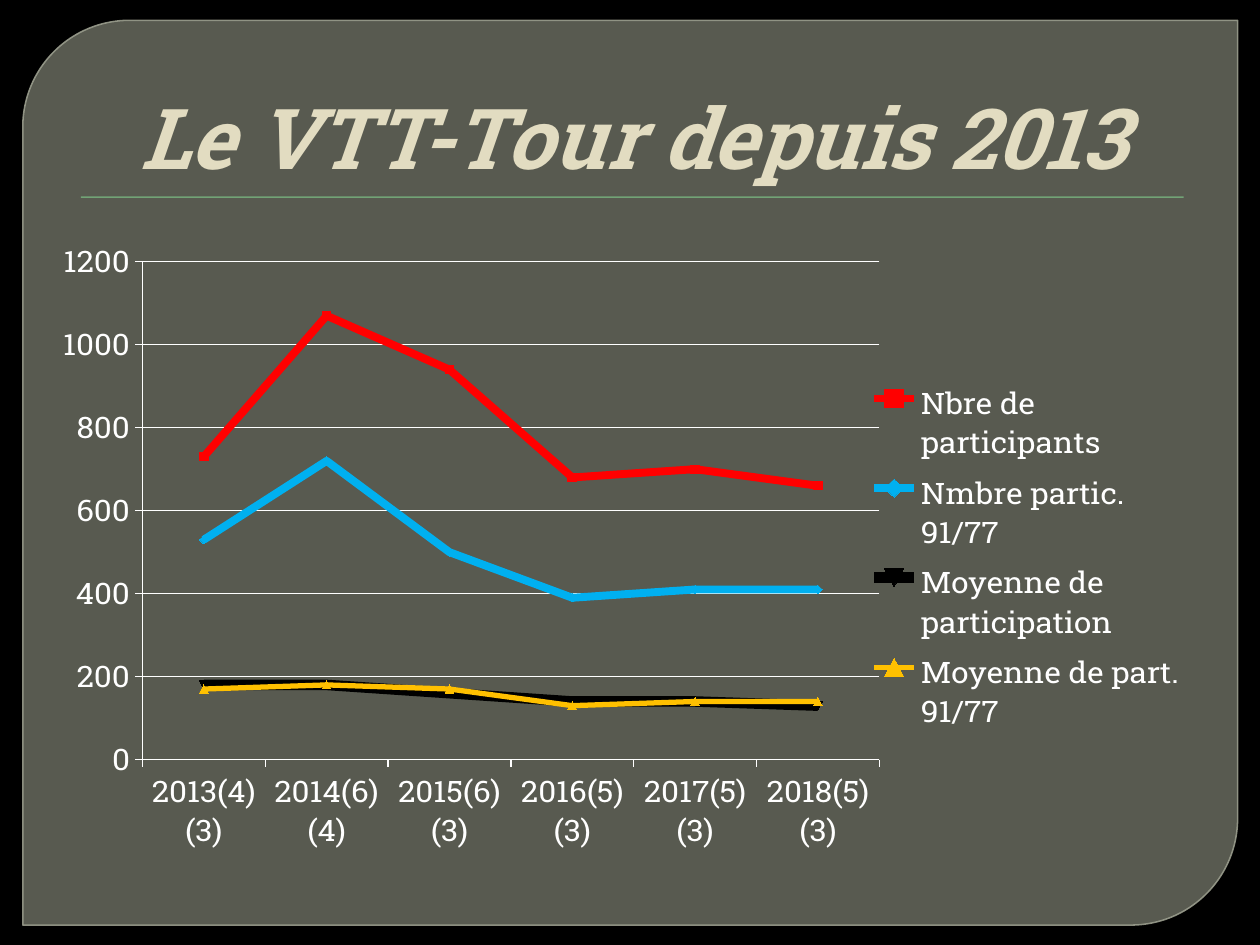
import dataclasses

import lxml.etree
import pptx
import pptx.chart.data
import pptx.dml.color
import pptx.enum.chart
import pptx.enum.shapes
import pptx.enum.text
import pptx.oxml
import pptx.oxml.ns
import pptx.util
from pptx.util import Cm

FONT = "Roboto Slab"
COLORS = {
    "background": "000000",
    "panel": "888B7B",
    "border": "9DA090",
    "rule": "72A376",
    "title": "E2DCC1",
    "text": "FFFFFF",
    "red": "FF0000",
    "blue": "00B0F0",
    "black": "000000",
    "yellow": "FFC000",
}


@dataclasses.dataclass(frozen=True)
class Series:
    name: str
    values: tuple[int, ...]
    color: str
    width: float


@dataclasses.dataclass(frozen=True)
class Box:
    """Place and size in centimetres."""

    left: float
    top: float
    width: float
    height: float

    def lengths(self) -> list[Cm]:
        return [Cm(value) for value in dataclasses.astuple(self)]


CATEGORIES = (
    "2013(4)(3)", "2014(6)(4)", "2015(6)(3)",
    "2016(5)(3)", "2017(5)(3)", "2018(5)(3)",
)
SERIES = (
    Series("Nbre de participants", (730, 1070, 940, 680, 700, 660), "red", 4.5),
    Series("Nmbre partic. 91/77", (530, 720, 500, 390, 410, 410), "blue", 4.5),
    Series("Moyenne de participation", (180, 180, 160, 140, 140, 130), "black", 6),
    Series("Moyenne de part. 91/77", (170, 180, 170, 130, 140, 140), "yellow", 3),
)


def rgb(name: str) -> pptx.dml.color.RGBColor:
    return pptx.dml.color.RGBColor.from_string(COLORS[name])


def set_opacity(fill, percent: int) -> None:
    color = fill._xPr.find(".//" + pptx.oxml.ns.qn("a:srgbClr"))
    alpha = lxml.etree.SubElement(color, pptx.oxml.ns.qn("a:alpha"))
    alpha.set("val", str(percent * 1000))


def add_backdrop_shape(slide, kind, box: Box, color: str):
    """Add a filled shape behind the title."""
    shape = slide.shapes.add_shape(kind, *box.lengths())
    shape.shadow.inherit = False
    shape.fill.solid()
    shape.fill.fore_color.rgb = rgb(color)
    shape.line.fill.background()
    slide.shapes.title._element.addprevious(shape._element)
    return shape


def add_panel(slide) -> None:
    panel = add_backdrop_shape(
        slide, pptx.enum.shapes.MSO_SHAPE.ROUND_2_DIAG_RECTANGLE,
        Box(0.46, 0.41, 24.49, 18.24), "panel")
    panel.adjustments[0] = 0.118
    panel.adjustments[1] = 0
    set_opacity(panel.fill, 65)
    panel.line.fill.solid()
    panel.line.color.rgb = rgb("border")
    panel.line.width = pptx.util.Pt(0.87)
    set_opacity(panel.line.fill, 88)


def format_title(title, text: str) -> None:
    title.left, title.top, title.width, title.height = Box(
        1.27, 0.71, 22.86, 3.18).lengths()
    frame = title.text_frame
    frame.word_wrap = True
    frame.auto_size = pptx.enum.text.MSO_AUTO_SIZE.NONE
    frame.vertical_anchor = pptx.enum.text.MSO_ANCHOR.BOTTOM
    paragraph = frame.paragraphs[0]
    paragraph.alignment = pptx.enum.text.PP_ALIGN.CENTER
    paragraph._p.get_or_add_pPr().set("marL", str(Cm(0.15)))
    run = paragraph.add_run()
    run.text = text
    run.font.name = FONT
    run.font.size = pptx.util.Pt(48)
    run.font.bold = run.font.italic = True
    run.font.color.rgb = rgb("title")


def place_in_chart(element, after: str, box: tuple[float, ...], inner: bool = False) -> None:
    """Give a plot area or legend a fixed place, in fractions of the chart."""
    for old in element.findall(pptx.oxml.ns.qn("c:layout")):
        element.remove(old)
    target = '<c:layoutTarget val="inner"/>' if inner else ""
    modes = "".join(f'<c:{axis}Mode val="edge"/>' for axis in "xy")
    sizes = "".join(f'<c:{key} val="{value}"/>' for key, value in zip("xywh", box))
    layout = pptx.oxml.parse_xml(
        f'<c:layout {pptx.oxml.ns.nsdecls("c")}><c:manualLayout>'
        f"{target}{modes}{sizes}</c:manualLayout></c:layout>")
    previous = element.find(pptx.oxml.ns.qn(after)) if after else None
    if previous is None:
        element.insert(0, layout)
    else:
        previous.addnext(layout)


def format_axis(axis) -> None:
    axis.major_tick_mark = pptx.enum.chart.XL_TICK_MARK.OUTSIDE
    axis.minor_tick_mark = pptx.enum.chart.XL_TICK_MARK.NONE
    axis.format.line.color.rgb = rgb("text")
    axis.format.line.width = pptx.util.Pt(0.75)


def add_line_chart(slide) -> None:
    data = pptx.chart.data.CategoryChartData()
    data.categories = CATEGORIES
    for series in SERIES:
        data.add_series(series.name, series.values)
    chart = slide.shapes.add_chart(
        pptx.enum.chart.XL_CHART_TYPE.LINE_MARKERS,
        *Box(1.27, 4.57, 22.86, 12.57).lengths(), data).chart
    chart.has_title = False
    chart.font.name = FONT
    chart.font.size = pptx.util.Pt(18)
    chart.font.color.rgb = rgb("text")

    plot = chart.plots[0]
    plot.vary_by_categories = False
    for line, series in zip(plot.series, SERIES):
        line.smooth = False
        line.format.line.color.rgb = rgb(series.color)
        line.format.line.width = pptx.util.Pt(series.width)
        line.marker.size = 5

    format_axis(chart.category_axis)
    format_axis(chart.value_axis)
    chart.value_axis.minimum_scale = 0
    chart.value_axis.maximum_scale = 1200
    chart.value_axis.major_unit = 200
    gridlines = chart.value_axis.major_gridlines.format.line
    gridlines.color.rgb = rgb("text")
    gridlines.width = pptx.util.Pt(0.75)

    chart.has_legend = True
    chart.legend.position = pptx.enum.chart.XL_LEGEND_POSITION.RIGHT
    chart.legend.include_in_layout = False
    place_in_chart(chart.legend._element, "c:legendPos", (0.71, 0.25, 0.28, 0.63))
    plot_area = chart._chartSpace.chart.plotArea
    place_in_chart(plot_area, "", (0.07, 0.06, 0.65, 0.85), inner=True)


def main() -> None:
    presentation = pptx.Presentation()
    presentation.slide_width = Cm(25.4)
    presentation.slide_height = Cm(19.05)
    slide = presentation.slides.add_slide(presentation.slide_layouts.get_by_name("Title Only"))
    slide.background.fill.solid()
    slide.background.fill.fore_color.rgb = rgb("background")
    add_panel(slide)
    add_backdrop_shape(slide, pptx.enum.shapes.MSO_SHAPE.RECTANGLE,
                       Box(1.63, 3.96, 22.23, 0.03), "rule")
    format_title(slide.shapes.title, "Le VTT-Tour depuis 2013")
    add_line_chart(slide)
    presentation.save("out.pptx")


if __name__ == "__main__":
    main()
